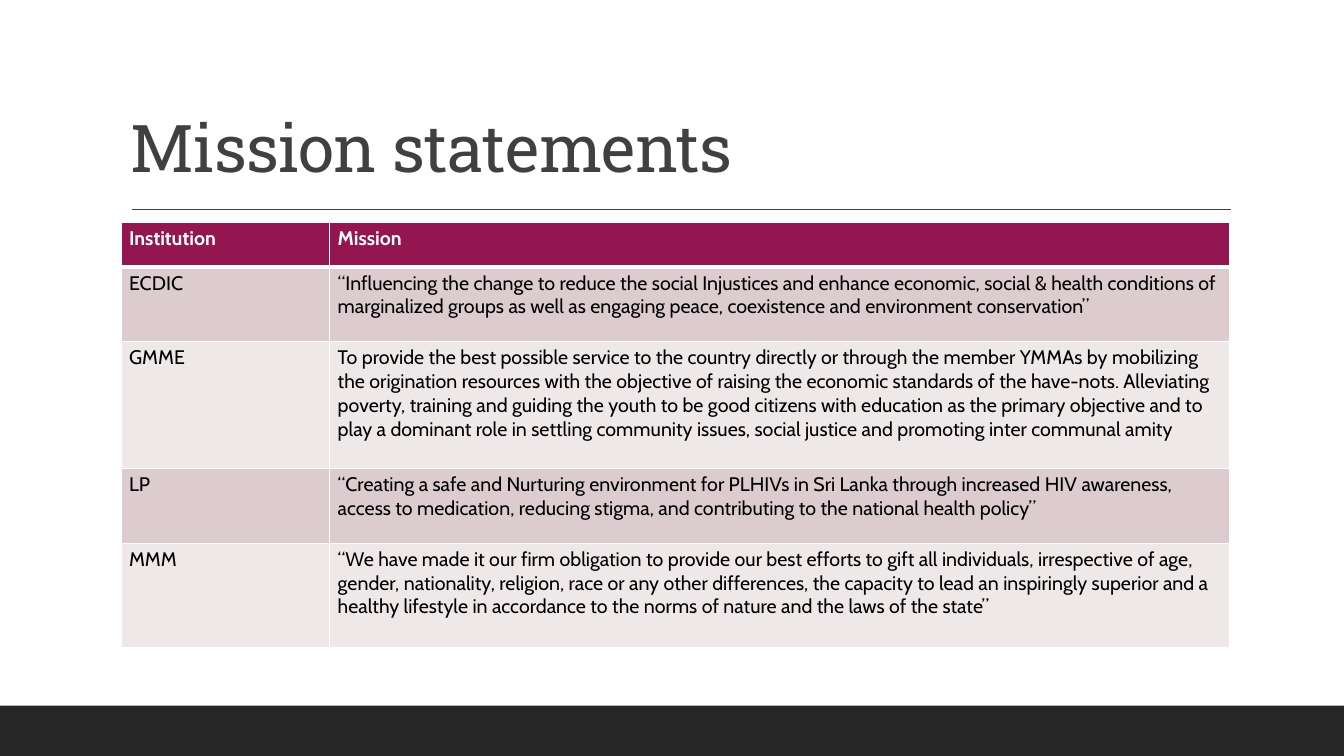
import pptx
import pptx.dml.color
import pptx.enum.shapes
import pptx.enum.text
import pptx.oxml
import pptx.oxml.ns
import pptx.util
from pptx.dml.color import RGBColor
from pptx.util import Inches

WHITE = RGBColor(0xFF, 0xFF, 0xFF)
BLACK = RGBColor(0x00, 0x00, 0x00)
GREY = RGBColor(0x40, 0x40, 0x40)
CHARCOAL = RGBColor(0x26, 0x26, 0x26)
PLUM = RGBColor(0x94, 0x16, 0x51)
ROSE = RGBColor(0xDC, 0xCC, 0xD0)
PALE_ROSE = RGBColor(0xEE, 0xE8, 0xE9)

COLUMN_WIDTHS = [2.07, 8.93]
ROW_HEIGHTS = [0.44, 0.74, 1.26, 0.74, 1.04]
MISSIONS = [
    ("Institution", "Mission"),
    ("ECDIC",
     "“Influencing the change to reduce the social Injustices and enhance economic, "
     "social & health conditions of marginalized groups as well as engaging peace, "
     "coexistence and environment conservation”"),
    ("GMME",
     "To provide the best possible service to the country directly or through the member "
     "YMMAs by mobilizing the origination resources with the objective of raising the "
     "economic standards of the have-nots. Alleviating poverty, training and guiding the "
     "youth to be good citizens with education as the primary objective and to play a "
     "dominant role in settling community issues, social justice and promoting inter "
     "communal amity"),
    ("LP",
     "“Creating a safe and Nurturing environment for PLHIVs in Sri Lanka through increased "
     "HIV awareness, access to medication, reducing stigma, and contributing to the "
     "national health policy”"),
    ("MMM",
     "“We have made it our firm obligation to provide our best efforts to gift all "
     "individuals, irrespective of age, gender, nationality, religion, race or any other "
     "differences, the capacity to lead an inspiringly superior and a healthy lifestyle in "
     "accordance to the norms of nature and the laws of the state”"),
]


def write_text(frame, text, *, font, size, color, bold=False, line_spacing=1.0, tracking=None):
    """Fill the first paragraph of a frame; tracking is in points."""
    frame.word_wrap = True
    para = frame.paragraphs[0]
    para.line_spacing = line_spacing
    span = para.add_run()
    span.text = text
    span.font.name = font
    span.font.size = pptx.util.Pt(size)
    span.font.bold = bold
    span.font.color.rgb = color
    if tracking is not None:
        span.font._element.set("spc", str(round(tracking * 100)))


def add_title(page, text):
    box = page.shapes.add_textbox(Inches(1.2), Inches(0.31), Inches(11), Inches(1.59))
    box.text_frame.vertical_anchor = pptx.enum.text.MSO_ANCHOR.BOTTOM
    write_text(box.text_frame, text, font="Roboto Slab", size=47, color=GREY,
               line_spacing=0.9, tracking=-0.5)


def add_rule(page):
    rule = page.shapes.add_connector(pptx.enum.shapes.MSO_CONNECTOR.STRAIGHT,
                                     Inches(1.31), Inches(2.08), Inches(12.21), Inches(2.08))
    rule.line.color.rgb = GREY
    rule.line.width = pptx.util.Pt(1)
    rule._element.spPr.append(pptx.oxml.parse_xml(
        f"<a:effectLst {pptx.oxml.ns.nsdecls('a')}/>"))


def add_band(page, top, height, color):
    """Add a plain rectangle across the full slide width."""
    band = page.shapes.add_shape(pptx.enum.shapes.MSO_SHAPE.RECTANGLE,
                                 0, Inches(top), Inches(13.33), Inches(height))
    band.shadow.inherit = False
    band.fill.solid()
    band.fill.fore_color.rgb = color
    band.line.fill.background()


def set_borders(cell, top, bottom):
    """Give a cell white borders; top and bottom are widths in points."""
    properties = cell._tc.get_or_add_tcPr()
    widths = {"lnL": 1, "lnR": 1, "lnT": top, "lnB": bottom}
    for position, (side, width) in enumerate(widths.items()):
        properties.insert(position, pptx.oxml.parse_xml(
            f'<a:{side} {pptx.oxml.ns.nsdecls("a")} w="{pptx.util.Pt(width)}">'
            f'<a:solidFill><a:srgbClr val="{WHITE}"/></a:solidFill></a:{side}>'))


def add_mission_table(page):
    table = page.shapes.add_table(len(MISSIONS), len(COLUMN_WIDTHS), Inches(1.2), Inches(2.21),
                                  Inches(sum(COLUMN_WIDTHS)), Inches(sum(ROW_HEIGHTS))).table
    for column, width in zip(table.columns, COLUMN_WIDTHS):
        column.width = Inches(width)
    for index, (row, height, texts) in enumerate(zip(table.rows, ROW_HEIGHTS, MISSIONS)):
        row.height = Inches(height)
        header = index == 0
        fill = PLUM if header else (PALE_ROSE, ROSE)[index % 2]
        for cell, text in zip(row.cells, texts):
            cell.margin_left = cell.margin_right = Inches(0.08)
            cell.margin_top = cell.margin_bottom = Inches(0.04)
            cell.fill.solid()
            cell.fill.fore_color.rgb = fill
            set_borders(cell, top=3 if index == 1 else 1, bottom=3 if header else 1)
            write_text(cell.text_frame, text, font="Cabin", size=14,
                       color=WHITE if header else BLACK, bold=header)


def main():
    deck = pptx.Presentation()
    deck.slide_width = Inches(13.33)
    deck.slide_height = Inches(7.5)
    page = deck.slides.add_slide(deck.slide_layouts[6])
    add_band(page, 0, 7.5, WHITE)
    add_title(page, "Mission statements")
    add_rule(page)
    add_band(page, 7, 0.5, CHARCOAL)
    add_mission_table(page)
    deck.save("out.pptx")


if __name__ == "__main__":
    main()
